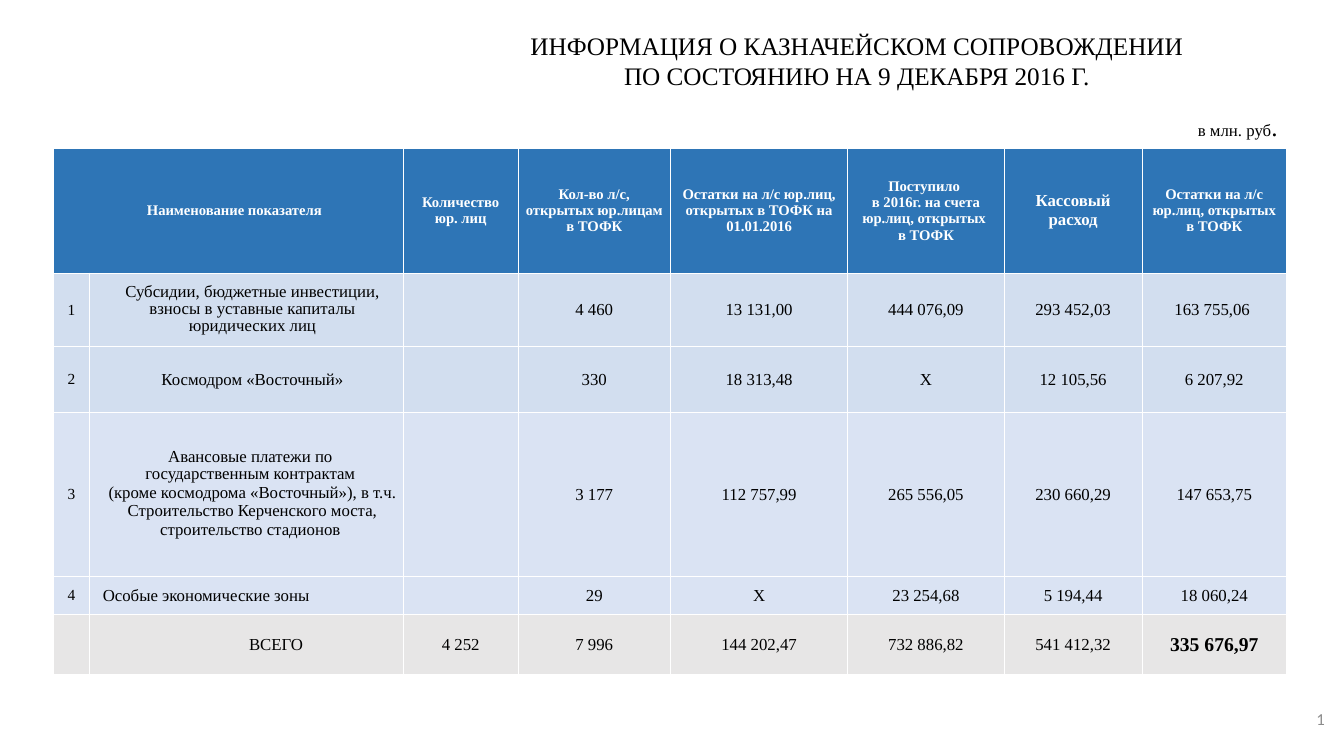
from lxml import etree
from pptx import Presentation
from pptx.dml.color import RGBColor
from pptx.enum.text import MSO_ANCHOR, PP_ALIGN
from pptx.oxml.ns import qn
from pptx.util import Inches, Pt

CENTER, LEFT, RIGHT = PP_ALIGN.CENTER, PP_ALIGN.LEFT, PP_ALIGN.RIGHT
TOP, MIDDLE = MSO_ANCHOR.TOP, MSO_ANCHOR.MIDDLE
SERIF, SANS = "Times New Roman", "Calibri"
BLACK, WHITE, GRAY = "000000", "FFFFFF", "8C8C8C"
HEADER_FILL = "2E75B6"
ROW_FILLS = ["D2DEEF", "D2DEEF", "DAE3F3", "DAE3F3", "E7E6E6"]

COL_WIDTHS = [0.36, 3.11, 1.14, 1.51, 1.76, 1.55, 1.37, 1.43]
ROW_HEIGHTS = [1.24, 0.73, 0.65, 1.63, 0.38, 0.59]
HEADERS = [
    "Наименование показателя", "",
    "Количество\nюр. лиц",
    "Кол-во л/с, открытых юр.лицам в ТОФК",
    "Остатки на л/с юр.лиц, открытых в ТОФК на 01.01.2016",
    "Поступило \nв 2016г. на счета юр.лиц, открытых \nв ТОФК",
    "Кассовый расход",
    "Остатки на л/с юр.лиц, открытых в ТОФК",
]
ROWS = [
    ["1", "Субсидии, бюджетные инвестиции, взносы в уставные капиталы юридических лиц",
     "", "4 460", "13 131,00", "444 076,09", "293 452,03", "163 755,06 "],
    ["2", "Космодром «Восточный»",
     "", "330", "18 313,48", "Х", "12 105,56", "6 207,92"],
    ["3", "Авансовые платежи по \nгосударственным контрактам \n"
          "(кроме космодрома «Восточный»), в т.ч. Строительство Керченского моста, "
          "строительство стадионов ",
     "", "3 177", "112 757,99", "265 556,05", "230 660,29", "147 653,75"],
    ["4", "Особые экономические зоны",
     "", "29", "Х", "23 254,68", "5 194,44", "18 060,24"],
    ["", "ВСЕГО",
     "4 252", "7 996", "144 202,47", "732 886,82", "541 412,32", "335 676,97"],
]
# Name column by row: alignment, left indent, line spacings of its paragraphs
NAME_FORMATS = [
    (CENTER, 0.12, [12]),
    (CENTER, 0.12, []),
    (CENTER, 0.12, [12, 12]),
    (LEFT, 0.12, []),
    (LEFT, 1.57, []),
]


def rgb(color):
    return RGBColor.from_string(color)


def style_font(font, size, color, name, bold):
    font.size, font.name, font.bold = Pt(size), name, bold
    font.color.rgb = rgb(color)


def write(tf, text, size=12, color=BLACK, name=SERIF, bold=False, align=CENTER,
          indent=0, spacings=()):
    """Fill a text frame with one paragraph for each line of text."""
    for i, line in enumerate(text.split("\n")):
        p = tf.paragraphs[0] if i == 0 else tf.add_paragraph()
        p.alignment = align
        if indent:
            p._p.get_or_add_pPr().set("marL", str(Inches(indent)))
        if i < len(spacings):
            p.line_spacing = Pt(spacings[i])
        r = p.add_run()
        r.text = line
        style_font(r.font, size, color, name, bold)


def add_box(slide, left, top, width, height, anchor=TOP):
    tf = slide.shapes.add_textbox(
        Inches(left), Inches(top), Inches(width), Inches(height)).text_frame
    tf.word_wrap = True
    tf.vertical_anchor = anchor
    return tf


def add_title(slide):
    title = slide.shapes.title
    title.left, title.top = Inches(4.16), Inches(0.25)
    title.width, title.height = Inches(8.74), Inches(0.71)
    title.text_frame.vertical_anchor = TOP
    write(title.text_frame, "ИНФОРМАЦИЯ О КАЗНАЧЕЙСКОМ СОПРОВОЖДЕНИИ \n"
                            "ПО СОСТОЯНИЮ НА 9 ДЕКАБРЯ 2016 Г. ", size=18)


def add_units(slide):
    tf = add_box(slide, 11.39, 1.06, 1.38, 0.4)
    write(tf, "в млн. руб", align=RIGHT)
    r = tf.paragraphs[0].add_run()
    r.text = "."
    style_font(r.font, 18, BLACK, SERIF, False)


def add_page_number(slide):
    tf = add_box(slide, 10.24, 6.93, 3, 0.4, MIDDLE)
    write(tf, "4", color=GRAY, name=SANS, align=RIGHT)
    # A field holds the same children as a run
    run = tf.paragraphs[0].runs[0]._r
    run.tag = qn("a:fld")
    run.set("id", "{B6F15528-21DE-4FAA-801E-634DDDAF4B2B}")
    run.set("type", "slidenum")


def style_cell(cell, fill, margin_x):
    tcPr = cell._tc.get_or_add_tcPr()
    for side in ("a:lnL", "a:lnR", "a:lnT", "a:lnB"):
        ln = etree.SubElement(tcPr, qn(side), w=str(Pt(1)))
        solid = etree.SubElement(ln, qn("a:solidFill"))
        etree.SubElement(solid, qn("a:srgbClr"), val=WHITE)
    cell.fill.solid()
    cell.fill.fore_color.rgb = rgb(fill)
    cell.vertical_anchor = MIDDLE
    cell.margin_left = cell.margin_right = Inches(margin_x)
    cell.margin_top = cell.margin_bottom = 0


def fill_header(table):
    for c, text in enumerate(HEADERS):
        cell = table.cell(0, c)
        style_cell(cell, HEADER_FILL, 0.07)
        if text:
            write(cell.text_frame, text, size=12 if c == 6 else 10.5, color=WHITE,
                  bold=True, indent=0.12 if c == 0 else 0)
    table.cell(0, 0).merge(table.cell(0, 1))


def fill_row(table, index, values):
    for c, text in enumerate(values):
        cell = table.cell(index + 1, c)
        style_cell(cell, ROW_FILLS[index], 0.01)
        fmt = {}
        if c == 0:
            fmt = {"size": 11}
        elif c == 1:
            fmt = dict(zip(("align", "indent", "spacings"), NAME_FORMATS[index]))
        elif index == len(ROWS) - 1 and c == len(values) - 1:
            fmt = {"size": 14, "bold": True}
        if text:
            write(cell.text_frame, text, **fmt)


def add_indicator_table(slide):
    table = slide.shapes.add_table(
        len(ROW_HEIGHTS), len(COL_WIDTHS), Inches(0.53), Inches(1.47),
        Inches(sum(COL_WIDTHS)), Inches(sum(ROW_HEIGHTS))).table
    for column, width in zip(table.columns, COL_WIDTHS):
        column.width = Inches(width)
    for row, height in zip(table.rows, ROW_HEIGHTS):
        row.height = Inches(height)
    fill_header(table)
    for i, values in enumerate(ROWS):
        fill_row(table, i, values)


def main():
    prs = Presentation()
    prs.slide_width, prs.slide_height = Inches(13.33), Inches(7.5)
    slide = prs.slides.add_slide(prs.slide_layouts[5])
    add_title(slide)
    add_indicator_table(slide)
    add_units(slide)
    add_page_number(slide)
    prs.save("out.pptx")


if __name__ == "__main__":
    main()
